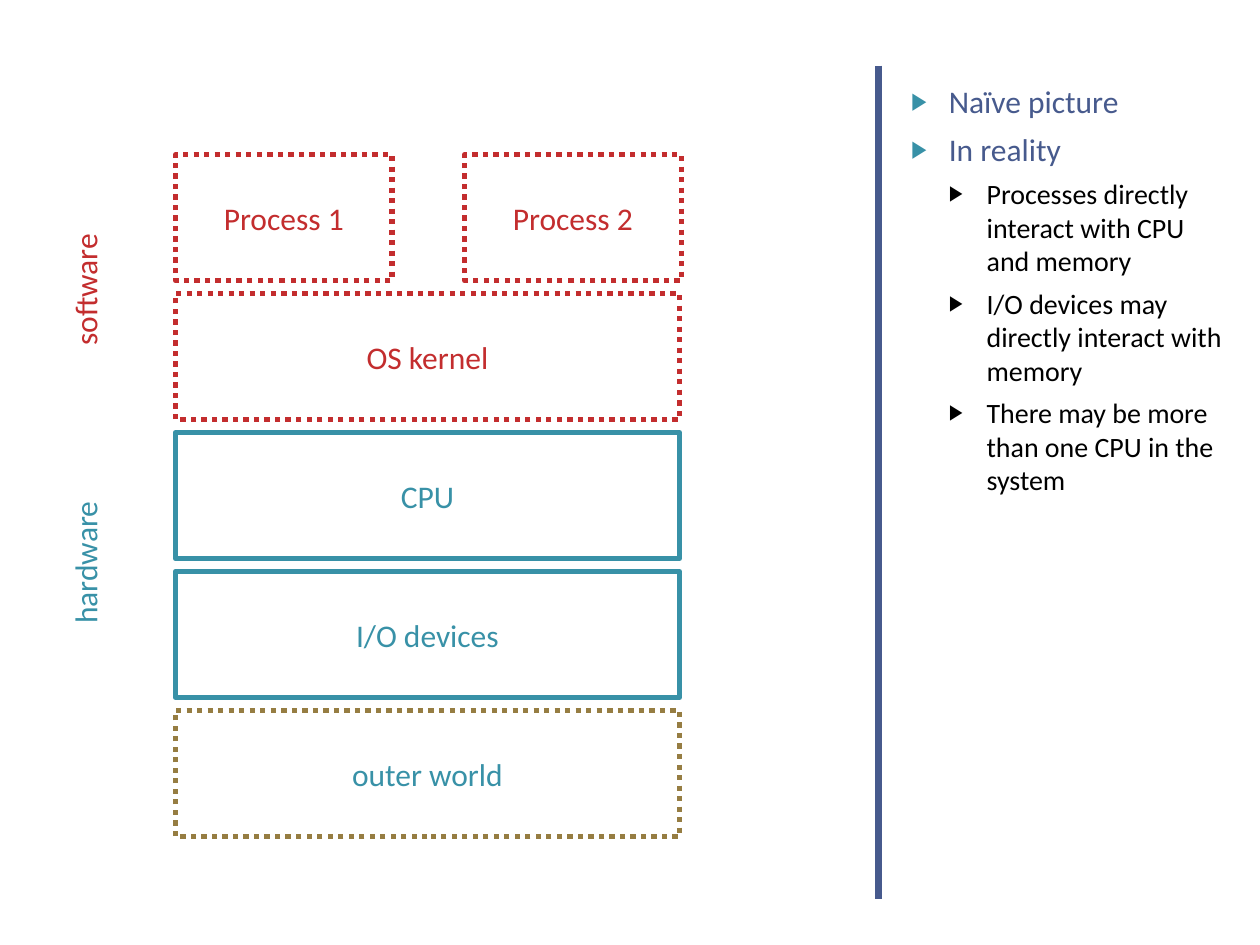
import dataclasses

import pptx
import pptx.dml.color
import pptx.enum.dml
import pptx.enum.shapes
import pptx.enum.text
import pptx.oxml
import pptx.oxml.ns
import pptx.util

Pt = pptx.util.Pt
DOTTED = pptx.enum.dml.MSO_LINE.ROUND_DOT


@dataclasses.dataclass(frozen=True)
class Theme:
    font: str = "Calibri"
    software: str = "C32D2E"
    hardware: str = "3891A7"
    world: str = "967D42"
    accent: str = "475A8D"
    body: str = "000000"
    main_size: int = 18
    sub_size: int = 16
    bullet_percent: int = 76
    box_line: int = 3
    divider_line: int = 4


class SlideBuilder:
    """Draws themed elements on the current slide, with lengths in points."""

    def __init__(self, theme, slide):
        self.theme = theme
        self.slide = slide

    def color(self, code):
        return pptx.dml.color.RGBColor.from_string(code)

    def style(self, paragraph, size, color):
        for run in paragraph.runs:
            run.font.name = self.theme.font
            run.font.size = Pt(size)
            run.font.color.rgb = self.color(color)

    def center(self, frame, text, color):
        frame.text = text
        frame.word_wrap = True
        frame.vertical_anchor = pptx.enum.text.MSO_ANCHOR.MIDDLE
        frame.paragraphs[0].alignment = pptx.enum.text.PP_ALIGN.CENTER
        self.style(frame.paragraphs[0], self.theme.main_size, color)

    def box(self, text, left, top, width, height, color, border=None, dash=None):
        layer = self.slide.shapes.add_shape(
            pptx.enum.shapes.MSO_SHAPE.RECTANGLE, Pt(left), Pt(top), Pt(width), Pt(height))
        layer.shadow.inherit = False
        layer.fill.background()
        layer.line.color.rgb = self.color(border or color)
        layer.line.width = Pt(self.theme.box_line)
        if dash:
            layer.line.dash_style = dash
        self.center(layer.text_frame, text, color)

    def side_label(self, text, left, top, width, height, color):
        label = self.slide.shapes.add_textbox(Pt(left), Pt(top), Pt(width), Pt(height))
        label.rotation = 270
        self.center(label.text_frame, text, color)

    def divider(self, x, top, bottom):
        rule = self.slide.shapes.add_connector(
            pptx.enum.shapes.MSO_CONNECTOR.STRAIGHT, Pt(x), Pt(top), Pt(x), Pt(bottom))
        rule.line.color.rgb = self.color(self.theme.accent)
        rule.line.width = Pt(self.theme.divider_line)
        properties = rule.element.spPr
        properties.append(properties.makeelement(pptx.oxml.ns.qn("a:effectLst"), {}))

    def bullet(self, paragraph, color, indent):
        properties = paragraph._p.get_or_add_pPr()
        properties.set("marL", str(Pt(indent * (paragraph.level + 1))))
        properties.set("indent", str(-Pt(indent)))
        namespace = pptx.oxml.ns.nsdecls("a")
        for markup in (
            f'<a:buClr {namespace}><a:srgbClr val="{color}"/></a:buClr>',
            f'<a:buSzPct {namespace} val="{self.theme.bullet_percent * 1000}"/>',
            f'<a:buChar {namespace} char="▶"/>',
        ):
            properties.append(pptx.oxml.parse_xml(markup))

    def outline(self, notes, left, top, width, height):
        theme = self.theme
        body = self.slide.placeholders[1]
        body.left, body.top, body.width, body.height = Pt(left), Pt(top), Pt(width), Pt(height)
        frame = body.text_frame
        frame.text = "\n".join(text for _, text in notes)
        frame.word_wrap = True
        frame.auto_size = pptx.enum.text.MSO_AUTO_SIZE.NONE
        levels = (
            (theme.main_size, theme.accent, theme.hardware, 6),
            (theme.sub_size, theme.body, theme.body, 5),
        )
        for paragraph, (level, _) in zip(frame.paragraphs, notes):
            size, color, marker, space = levels[level]
            paragraph.level = level
            paragraph.space_before = Pt(space)
            self.style(paragraph, size, color)
            self.bullet(paragraph, marker, indent=21.6)


def main():
    theme = Theme()
    deck = pptx.Presentation()
    deck.slide_width, deck.slide_height = Pt(720), Pt(540)
    slide = deck.slides.add_slide(deck.slide_layouts[1])
    title = slide.shapes.title.element
    title.getparent().remove(title)
    builder = SlideBuilder(theme, slide)

    builder.divider(502, 37.5, 514)
    builder.outline((
        (0, "Naïve picture"),
        (0, "In reality"),
        (1, "Processes directly interact with CPU and memory"),
        (1, "I/O devices may directly interact with memory"),
        (1, "There may be more than one CPU in the system"),
    ), 513.4, 43.2, 193, 465)

    stack_left, stack_top, layer_height, pitch = 100.3, 88.4, 72, 79.4
    for column, process in enumerate(("Process 1", "Process 2")):
        builder.box(process, stack_left + column * 165.2, stack_top, 123.8, layer_height,
                    theme.software, dash=DOTTED)
    layers = (
        ("OS kernel", theme.software, theme.software, DOTTED),
        ("CPU", theme.hardware, theme.hardware, None),
        ("I/O devices", theme.hardware, theme.hardware, None),
        ("outer world", theme.hardware, theme.world, DOTTED),
    )
    for row, (name, color, border, dash) in enumerate(layers, start=1):
        builder.box(name, stack_left, stack_top + row * pitch, 288, layer_height,
                    color, border, dash)

    for group, top, color in (("software", 140.2, theme.software),
                              ("hardware", 296, theme.hardware)):
        builder.side_label(group, -25.7, top, 148.3, 51, color)

    deck.save("out.pptx")


if __name__ == "__main__":
    main()
